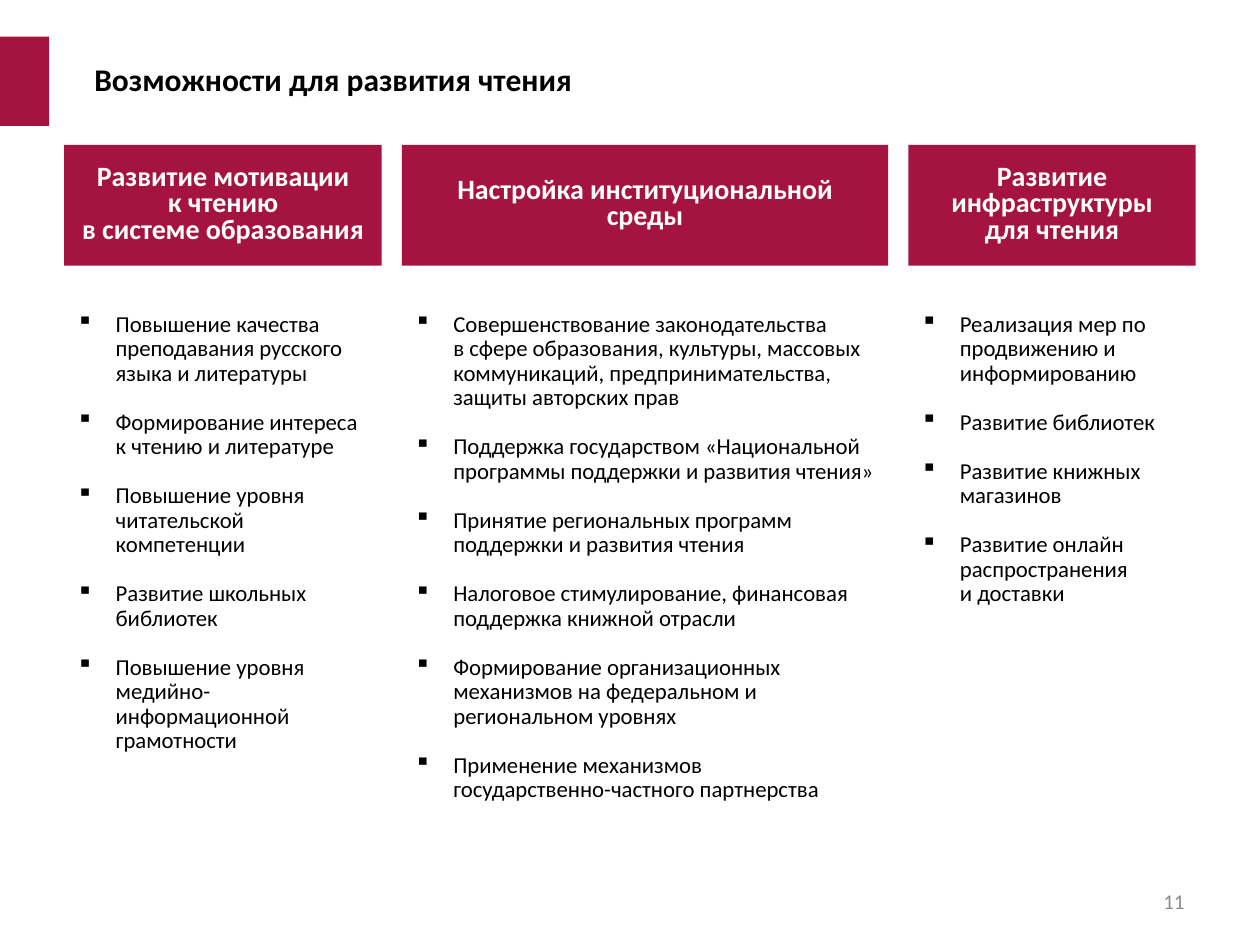
from dataclasses import dataclass
from itertools import accumulate

from lxml import etree
from pptx import Presentation, util as u
from pptx.dml.color import RGBColor
from pptx.enum import shapes, text
from pptx.oxml.ns import qn


@dataclass(frozen=True)
class Theme:
    font: str = "Calibri"
    accent: str = "A51340"
    ink: str = "000000"
    light: str = "FFFFFF"
    muted: str = "8C8C8C"
    title: int = 18
    head: int = 16
    body: int = 13
    number: int = 12


T = Theme()
WIDTH, HEIGHT = 10, 7.5
LEFT, GAP = 0.51, 0.16
HEAD_TOP, HEAD_HEIGHT = 1.15, 0.96
BODY_TOP, BODY_HEIGHT = 2.43, 4.71
INDENT = 0.31
ALIGN, ANCHOR = text.PP_ALIGN, text.MSO_ANCHOR

COLUMNS = [
    (2.52, ["Развитие мотивации", "к чтению", "в системе образования"], [
        "Повышение качества преподавания русского языка и литературы",
        "Формирование интереса\vк чтению и литературе",
        "Повышение уровня читательской компетенции",
        "Развитие школьных библиотек",
        "Повышение уровня медийно-информационной грамотности",
    ]),
    (3.86, ["Настройка институциональной", "среды"], [
        "Совершенствование законодательства\vв сфере образования, культуры, массовых "
        "коммуникаций, предпринимательства, защиты авторских прав",
        "Поддержка государством «Национальной программы поддержки и развития чтения»",
        "Принятие региональных программ поддержки и развития чтения",
        "Налоговое стимулирование, финансовая поддержка книжной отрасли",
        "Формирование организационных механизмов на федеральном и\vрегиональном уровнях",
        "Применение механизмов\vгосударственно-частного партнерства",
    ]),
    (2.28, ["Развитие инфраструктуры", "для чтения"], [
        "Реализация мер по\vпродвижению и\vинформированию",
        "Развитие библиотек",
        "Развитие книжных магазинов",
        "Развитие онлайн распространения\vи доставки",
    ]),
]


def add_bullet(p):
    pPr = p._p.get_or_add_pPr()
    pPr.set("marL", str(u.Inches(INDENT)))
    pPr.set("indent", str(-u.Inches(INDENT)))
    etree.SubElement(pPr, qn("a:buChar")).set("char", "▪")


def write(sp, lines, size, color=T.ink, bold=False, align=ALIGN.LEFT,
          anchor=ANCHOR.TOP, leading=None, gap=0, bullet=False):
    tf = sp.text_frame
    tf.word_wrap = True
    tf.vertical_anchor = anchor
    for i, line in enumerate(lines):
        p = tf.add_paragraph() if i else tf.paragraphs[0]
        p.text = line
        p.alignment = align
        if leading:
            p.line_spacing = u.Pt(leading)
        if gap and i:
            p.space_before = u.Pt(gap)
        if bullet:
            add_bullet(p)
        for r in p.runs:
            r.font.name, r.font.size, r.font.bold = T.font, u.Pt(size), bold
            r.font.color.rgb = RGBColor.from_string(color)


def add_box(s, *box):
    return s.shapes.add_textbox(*map(u.Inches, box))


def add_block(s, *box):
    sp = s.shapes.add_shape(shapes.MSO_SHAPE.RECTANGLE, *map(u.Inches, box))
    sp.shadow.inherit = False
    sp.fill.solid()
    sp.fill.fore_color.rgb = RGBColor.from_string(T.accent)
    sp.line.fill.background()
    return sp


def add_column(s, left, width, heading, items):
    sp = add_block(s, left, HEAD_TOP, width, HEAD_HEIGHT)
    tf = sp.text_frame
    tf.margin_left = tf.margin_right = tf.margin_top = tf.margin_bottom = u.Inches(0.08)
    write(sp, heading, T.head, color=T.light, bold=True, align=ALIGN.CENTER,
          anchor=ANCHOR.MIDDLE, leading=15)
    write(add_box(s, left, BODY_TOP, width, BODY_HEIGHT), items, T.body,
          leading=14, gap=14, bullet=True)


def main():
    prs = Presentation()
    prs.slide_width, prs.slide_height = u.Inches(WIDTH), u.Inches(HEIGHT)
    s = prs.slides.add_slide(prs.slide_layouts[6])
    add_block(s, 0, 0.29, 0.39, 0.71)
    write(add_box(s, 0.65, 0, 8.61, 1.25), ["Возможности для развития чтения"],
          T.title, bold=True, anchor=ANCHOR.MIDDLE)
    lefts = accumulate((width + GAP for width, _, _ in COLUMNS), initial=LEFT)
    for left, column in zip(lefts, COLUMNS):
        add_column(s, left, *column)
    write(add_box(s, 7.17, 6.95, 2.33, 0.4), ["11"], T.number, color=T.muted,
          align=ALIGN.RIGHT, anchor=ANCHOR.MIDDLE)
    prs.save("out.pptx")


if __name__ == "__main__":
    main()
